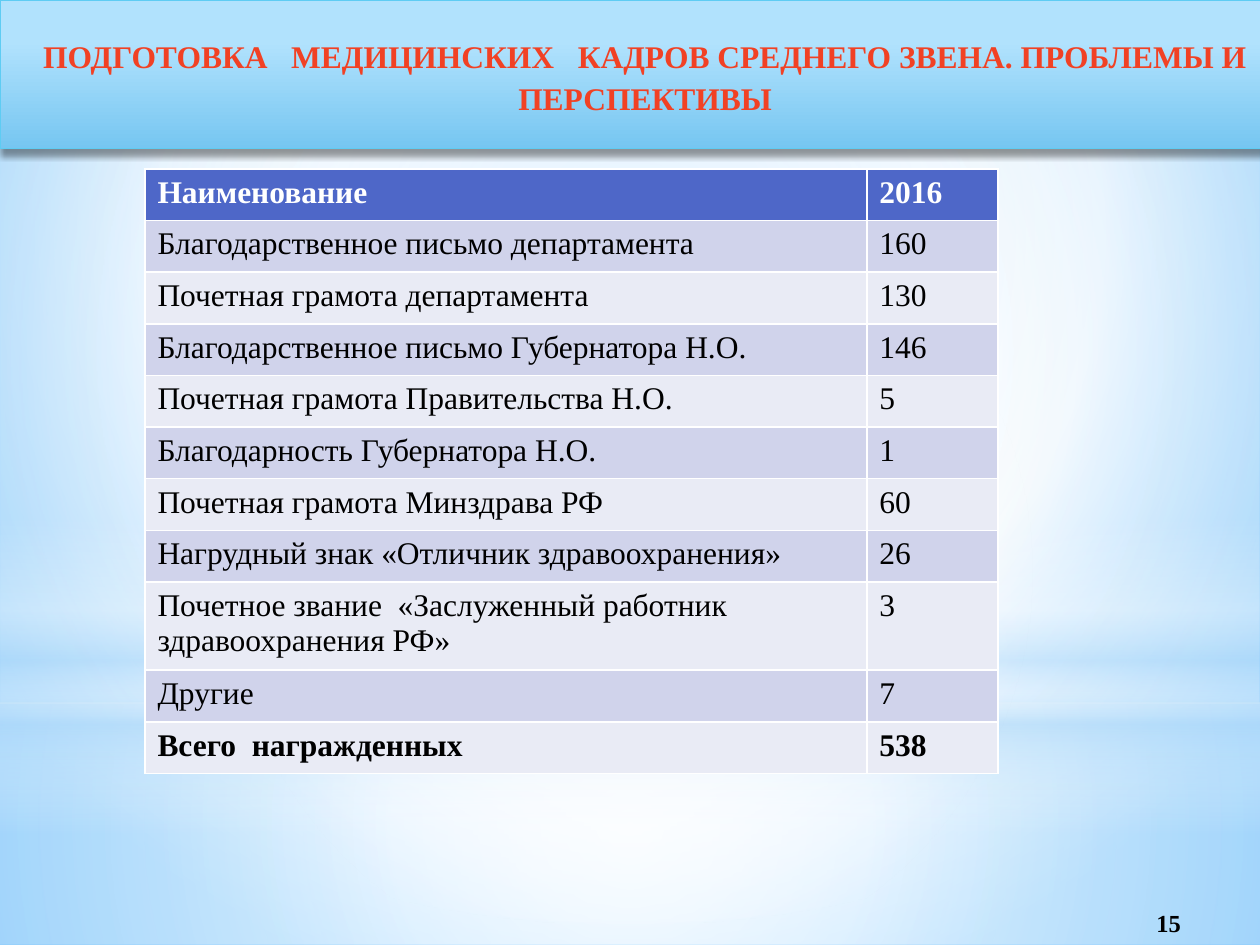
from lxml import etree
from pptx import Presentation
from pptx.dml.color import RGBColor
from pptx.enum.shapes import MSO_SHAPE
from pptx.enum.text import MSO_ANCHOR, MSO_AUTO_SIZE, PP_ALIGN
from pptx.oxml import parse_xml
from pptx.oxml.ns import nsdecls, qn
from pptx.util import Inches, Pt

RECT, OVAL = MSO_SHAPE.RECTANGLE, MSO_SHAPE.OVAL
MIDDLE, CENTER = MSO_ANCHOR.MIDDLE, PP_ALIGN.CENTER
NONE = MSO_AUTO_SIZE.NONE
FONT = "Times New Roman"
COLORS = {
    "white": "FFFFFF", "black": "000000", "red": "F14124",
    "sky": "9ED5FF", "blue": "5BB9FF", "haze": "B4DCFA",
    "top": "B1E2FD", "low": "76C6F1", "edge": "5ECCF3",
    "head": "4E67C8", "odd": "D0D3EB", "even": "E9EBF5",
}
ROUND = (50, 50, 50, 50)


def blend(root, stops, focus=None):
    """Swap the solid fill in root for a gradient: circular with a focus, else downward."""
    fill = parse_xml(f'<a:gradFill {nsdecls("a")} rotWithShape="1"><a:gsLst/></a:gradFill>')
    for pos, name, alpha in stops:
        stop = etree.SubElement(fill[0], qn("a:gs"), pos=str(pos * 1000))
        tone = etree.SubElement(stop, qn("a:srgbClr"), val=COLORS[name])
        if alpha < 100:
            etree.SubElement(tone, qn("a:alpha"), val=str(alpha * 1000))
    if focus:
        circle = etree.SubElement(fill, qn("a:path"), path="circle")
        sides = {side: str(n * 1000) for side, n in zip("ltrb", focus)}
        etree.SubElement(circle, qn("a:fillToRect"), **sides)
    else:
        etree.SubElement(fill, qn("a:lin"), ang="5400000", scaled="0")
    old = root.find(".//" + qn("a:solidFill"))
    old.getparent().replace(old, fill)


def style(para, size, color, bold):
    font = para.font
    font.name, font.size, font.bold = FONT, Pt(size), bold
    font.color.rgb = RGBColor.from_string(COLORS[color])


prs = Presentation()
prs.slide_width, prs.slide_height = Inches(10), Inches(7.5)
slide = prs.slides.add_slide(prs.slide_layouts[5])
shapes = slide.shapes

# Backdrop
slide.background.fill.solid()
blend(slide.element, [(0, "sky", 100), (60, "white", 100), (100, "blue", 100)],
      (20, 10, 20, 60))
glows = [
    (RECT, 5.58, 1.92, ROUND, [(0, "white", 91), (37, "white", 76), (100, "haze", 79)]),
    (RECT, 0, 5.58, ROUND, [(0, "white", 89), (48, "white", 62), (100, "haze", 79)]),
    (RECT, 4.12, 2.5, None, [(0, "white", 0), (29, "white", 30), (45, "haze", 40),
                             (55, "white", 26), (65, "haze", 60), (100, "white", 0)]),
    (OVAL, 1.75, 5.58, ROUND, [(0, "white", 100), (56, "white", 0)]),
]
for kind, top, height, focus, stops in glows:
    glow = shapes.add_shape(kind, 0, Inches(top), Inches(10), Inches(height))
    glow.shadow.inherit = False
    glow.line.fill.background()
    glow.fill.solid()
    blend(glow.element.spPr, stops, focus)

# Awards table
awards = [
    ("Наименование", "2016"),
    ("Благодарственное письмо департамента", "160"),
    ("Почетная грамота департамента", "130"),
    ("Благодарственное письмо Губернатора Н.О.", "146"),
    ("Почетная грамота Правительства Н.О.", "5"),
    ("Благодарность Губернатора Н.О.", "1"),
    ("Почетная грамота Минздрава РФ", "60"),
    ("Нагрудный знак «Отличник здравоохранения»", "26"),
    ("Почетное звание  «Заслуженный работник здравоохранения РФ»", "3"),
    ("Другие", "7"),
    ("Всего  награжденных", "538"),
]
last = len(awards) - 1
table = shapes.add_table(len(awards), 2, Inches(1.15), Inches(1.34),
                         Inches(6.78), Inches(4.75)).table
table.columns[0].width, table.columns[1].width = Inches(5.73), Inches(1.04)
for r, award in enumerate(awards):
    table.rows[r].height = Inches(0.7 if len(award[0]) > 50 else 0.41)
    shade = "head" if r == 0 else "odd" if r % 2 else "even"
    for c, text in enumerate(award):
        cell = table.cell(r, c)
        cell.text = text
        cell.fill.solid()
        cell.fill.fore_color.rgb = RGBColor.from_string(COLORS[shade])
        style(cell.text_frame.paragraphs[0], 18, "black" if r else "white", r in (0, last))

# Page number
page = shapes.add_textbox(Inches(8.55), Inches(7.15), Inches(1.45), Inches(0.35)).text_frame
page.word_wrap = True
page.vertical_anchor = MIDDLE
page.text = "15"
page.paragraphs[0].alignment = CENTER
style(page.paragraphs[0], 14, "black", True)

# Title banner, in front of the backdrop
title = shapes.title
title.left, title.top, title.width, title.height = 0, 0, Inches(10.24), Inches(1.18)
title.fill.solid()
blend(title.element.spPr, [(28, "top", 100), (100, "low", 100)])
title.line.color.rgb = RGBColor.from_string(COLORS["edge"])
title.line.width = Pt(0.75)
title.element.spPr.append(parse_xml(
    f'<a:effectLst {nsdecls("a")}><a:outerShdw blurRad="50800" dist="38100" dir="5400000">'
    f'<a:srgbClr val="{COLORS["black"]}"><a:alpha val="40000"/></a:srgbClr>'
    '</a:outerShdw></a:effectLst>'))
frame = title.text_frame
frame.text = "ПОДГОТОВКА   МЕДИЦИНСКИХ   КАДРОВ СРЕДНЕГО ЗВЕНА. ПРОБЛЕМЫ И ПЕРСПЕКТИВЫ"
frame.word_wrap, frame.auto_size, frame.vertical_anchor = True, NONE, MIDDLE
para = frame.paragraphs[0]
para.alignment, para.line_spacing = CENTER, Pt(24)
style(para, 18, "red", True)
shapes.element.append(title.element)

prs.save("out.pptx")
